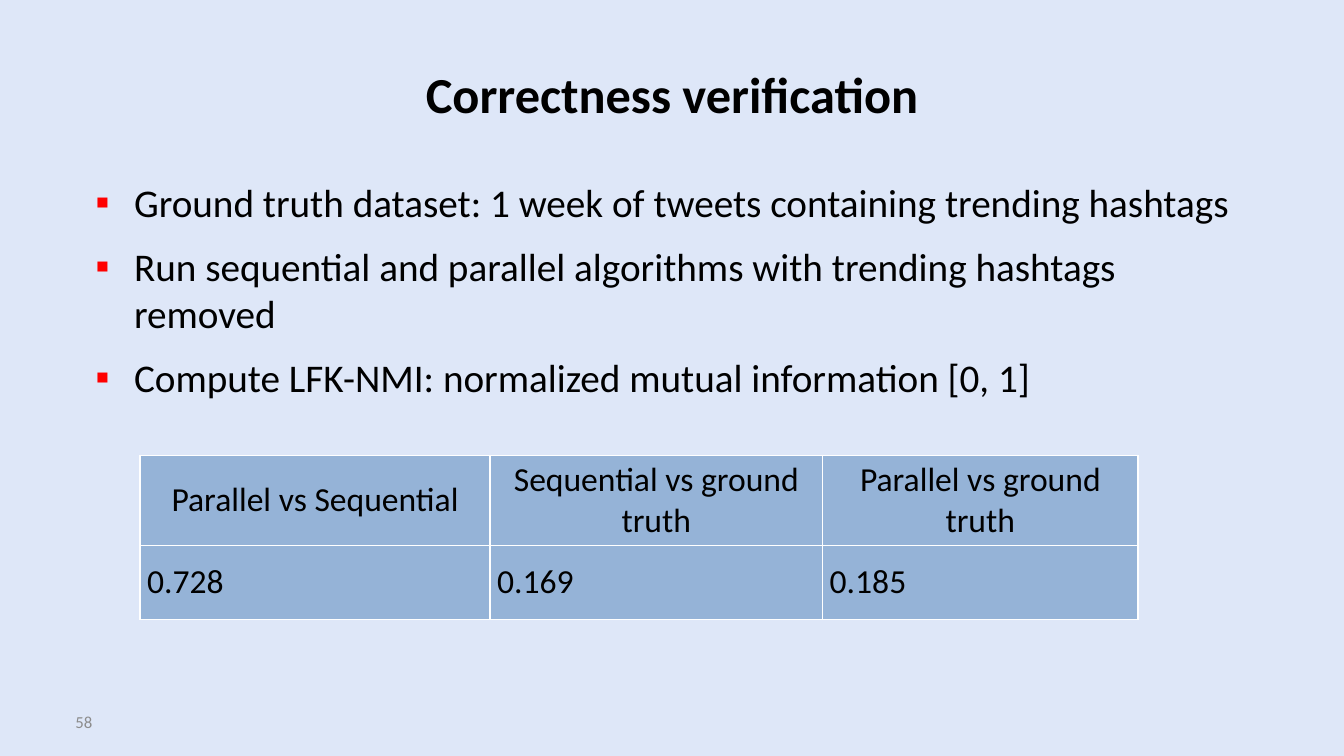
from pptx import Presentation
from pptx.dml.color import RGBColor
from pptx.enum.text import MSO_ANCHOR, PP_ALIGN
from pptx.oxml import parse_xml
from pptx.oxml.ns import nsdecls
from pptx.util import Cm, Pt

FONT = "Calibri"
BLACK, WHITE, GREY, RED = "000000", "FFFFFF", "8C8C8C", "FF0000"
BACKGROUND, CELL_BLUE = "DEE7F8", "95B3D7"
LEFT, CENTER, JUSTIFY = PP_ALIGN.LEFT, PP_ALIGN.CENTER, PP_ALIGN.JUSTIFY
TOP, MIDDLE = MSO_ANCHOR.TOP, MSO_ANCHOR.MIDDLE

POINTS = [
    "Ground truth dataset: 1 week of tweets containing trending hashtags",
    "Run sequential and parallel algorithms with trending hashtags removed",
    "Compute LFK-NMI: normalized mutual information [0, 1]",
]
SCORES = [
    ["Parallel vs Sequential", "Sequential vs ground truth", "Parallel vs ground truth"],
    ["0.728", "0.169", "0.185"],
]


def rgb(color):
    return RGBColor.from_string(color)


def write(p, text, size, color=BLACK, bold=False, align=LEFT):
    p.alignment = align
    r = p.add_run()
    r.text = text
    r.font.name = FONT
    r.font.size = Pt(size)
    r.font.bold = bold
    r.font.color.rgb = rgb(color)


def add_box(s, box, anchor=TOP):
    """Add a wrapping text box and return its text frame."""
    tf = s.shapes.add_textbox(*map(Cm, box)).text_frame
    tf.word_wrap = True
    tf.vertical_anchor = anchor
    return tf


def set_bullet(p, char, color, indent):
    pPr = p._p.get_or_add_pPr()
    pPr.set("marL", str(Cm(indent)))
    pPr.set("indent", str(-Cm(indent)))
    for xml in (
        f'<a:buClr {nsdecls("a")}><a:srgbClr val="{color}"/></a:buClr>',
        f'<a:buFont {nsdecls("a")} typeface="{FONT}"/>',
        f'<a:buChar {nsdecls("a")} char="{char}"/>',
    ):
        pPr.append(parse_xml(xml))


def set_borders(cell, color, width):
    tcPr = cell._tc.get_or_add_tcPr()
    for side in ("lnL", "lnR", "lnT", "lnB"):
        tcPr.append(parse_xml(
            f'<a:{side} {nsdecls("a")} w="{Pt(width)}"><a:solidFill>'
            f'<a:srgbClr val="{color}"/></a:solidFill></a:{side}>'))


def add_title(s, box, text):
    title = s.shapes.title
    title.left, title.top, title.width, title.height = map(Cm, box)
    tf = title.text_frame
    tf.word_wrap = True
    tf.vertical_anchor = MIDDLE
    write(tf.paragraphs[0], text, 36, bold=True, align=CENTER)


def add_points(s, box, points):
    tf = add_box(s, box)
    for i, point in enumerate(points):
        p = tf.add_paragraph() if i else tf.paragraphs[0]
        set_bullet(p, "▪", RED, 0.97)
        p.space_before = Pt(6 if i else 0)
        p.space_after = Pt(6)
        write(p, point, 28)


def add_scores(s, box, rows, col_widths, row_heights):
    table = s.shapes.add_table(len(rows), len(rows[0]), *map(Cm, box)).table
    for col, width in zip(table.columns, col_widths):
        col.width = Cm(width)
    for row, height in zip(table.rows, row_heights):
        row.height = Cm(height)
    for i, texts in enumerate(rows):
        for j, text in enumerate(texts):
            cell = table.cell(i, j)
            cell.margin_left = cell.margin_right = Cm(0.18)
            cell.margin_top = cell.margin_bottom = 0
            cell.vertical_anchor = MIDDLE
            set_borders(cell, WHITE, 1)
            cell.fill.solid()
            cell.fill.fore_color.rgb = rgb(CELL_BLUE)
            write(cell.text_frame.paragraphs[0], text, 24,
                  align=JUSTIFY if i else CENTER)


def add_page_number(s, box, number):
    write(add_box(s, box, MIDDLE).paragraphs[0], number, 12, GREY)


def main():
    prs = Presentation()
    prs.slide_width, prs.slide_height = Cm(33.87), Cm(19.05)
    s = prs.slides.add_slide(prs.slide_layouts[5])
    s.background.fill.solid()
    s.background.fill.fore_color.rgb = rgb(BACKGROUND)
    add_title(s, (1.7, 0.76, 30.48, 3.18), "Correctness verification")
    add_page_number(s, (1.65, 17.68, 7.9, 1.02), "58")
    add_points(s, (2.16, 4.37, 29.21, 5.69), POINTS)
    add_scores(s, (3.53, 11.48, 25.15, 4.14), SCORES,
               (8.82, 8.38, 7.95), (2.26, 1.88))
    prs.save("out.pptx")


if __name__ == "__main__":
    main()
